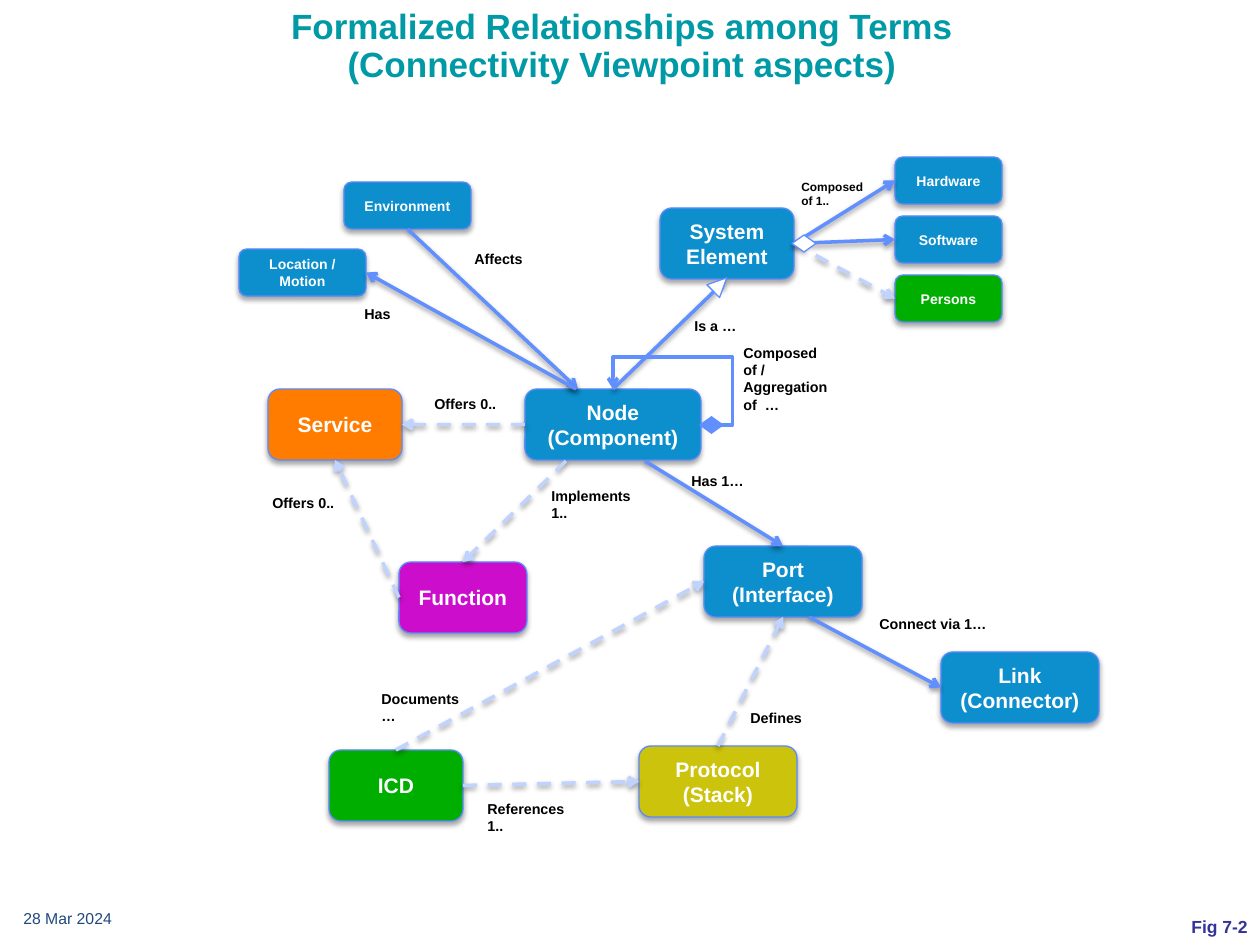
from lxml.etree import SubElement
from pptx import Presentation
from pptx.dml.color import RGBColor
from pptx.enum.dml import MSO_LINE
from pptx.enum.shapes import MSO_CONNECTOR, MSO_SHAPE
from pptx.enum.text import MSO_ANCHOR, MSO_AUTO_SIZE, PP_ALIGN
from pptx.oxml.ns import qn
from pptx.util import Emu, Pt

PIXELS_PER_INCH = 126
TOP, LEFT, BOTTOM, RIGHT = range(4)
BLUE, GREEN, ORANGE, PURPLE, OLIVE = "0C8FCC", "00AE00", "FF7C00", "CC0ECC", "CCC30C"
OUTLINE, SOLID_LINE, DASHED_LINE, WHITE = "5B8AFB", "618FFD", "C0D2FE", "FFFFFF"

# Name: left, top, width, height, fill, text size
BOXES = {
    "System\nElement": (660, 208, 134, 71, BLUE, 12),
    "Node\n(Component)": (525, 389, 176, 71, BLUE, 12),
    "Port\n(Interface)": (704, 546, 158, 71, BLUE, 12),
    "Link\n(Connector)": (941, 652, 158, 71, BLUE, 12),
    "Protocol\n(Stack)": (639, 746, 158, 71, OLIVE, 12),
    "Service": (268, 389, 134, 71, ORANGE, 12),
    "Function": (399, 562, 128, 71, PURPLE, 12),
    "ICD": (329, 750, 134, 71, GREEN, 12),
    "Environment": (344, 182, 127, 47, BLUE, 8),
    "Location / Motion": (239, 249, 127, 47, BLUE, 8),
}
ELEMENT_KINDS = [("Hardware", BLUE), ("Software", BLUE), ("Persons", GREEN)]

# Start, end, dashed; an end is a point or a box name with its side
RELATIONS = [
    ((566, 461), ("Function", TOP), True),
    (("Node\n(Component)", LEFT), ("Service", RIGHT), True),
    ((645, 461), ("Port\n(Interface)", TOP), False),
    (("Function", LEFT), ("Service", BOTTOM), True),
    (("System\nElement", RIGHT), ("Hardware", LEFT), False),
    (("System\nElement", RIGHT), ("Software", LEFT), False),
    (("System\nElement", RIGHT), ("Persons", LEFT), True),
    (("Environment", BOTTOM), (578, 389), False),
    ((576, 389), ("Location / Motion", RIGHT), False),
    ((809, 617), ("Link\n(Connector)", LEFT), False),
    (("Protocol\n(Stack)", TOP), ("Port\n(Interface)", BOTTOM), True),
    (("ICD", RIGHT), ("Protocol\n(Stack)", LEFT), True),
    (("ICD", TOP), ("Port\n(Interface)", LEFT), True),
]

# Text, left, top, width, height, text size
LABELS = [
    ("Implements 1..", 539, 481, 106, 48, 8.2),
    ("Is a …", 682, 311, 120, 30, 8.2),
    ("Offers 0..", 422, 389, 95, 30, 8.2),
    ("Has 1…", 679, 466, 115, 30, 8.2),
    ("Composed of 1..", 789, 173, 88, 42, 6.8),
    ("Affects", 462, 244, 77, 27, 8.2),
    ("Connect via 1…", 867, 609, 158, 30, 8.2),
    ("Composed of / Aggregation of  …", 731, 338, 120, 66, 8.2),
    ("Has", 352, 299, 77, 30, 8.2),
    ("Offers 0..", 260, 488, 106, 30, 8.2),
    ("References 1..", 475, 794, 117, 48, 8.2),
    ("Defines", 738, 703, 117, 30, 8.2),
    ("Documents …", 369, 684, 117, 48, 8.2),
]


def px(value):
    return Emu(round(value * 914400 / PIXELS_PER_INCH))


def color(hex_string):
    return RGBColor.from_string(hex_string)


def write_text(shape, text, size=8.2, fill="000000", bold=True,
               align=PP_ALIGN.LEFT, anchor=MSO_ANCHOR.TOP, wrap=True,
               auto_size=MSO_AUTO_SIZE.NONE, line_spacing=None):
    frame = shape.text_frame
    frame.text = text
    frame.word_wrap = wrap
    frame.auto_size = auto_size
    frame.vertical_anchor = anchor
    for paragraph in frame.paragraphs:
        paragraph.alignment = align
        paragraph.line_spacing = line_spacing
        for run in paragraph.runs:
            run.font.name = "Arial"
            run.font.size = Pt(size)
            run.font.bold = bold
            run.font.color.rgb = color(fill)


def set_shadow(properties, opacity, distance):
    effects = properties.find(qn("a:effectLst"))
    if effects is None:
        effects = SubElement(properties, qn("a:effectLst"))
    if opacity:
        shadow = SubElement(effects, qn("a:outerShdw"), blurRad=str(Pt(3.1)),
                            dist=str(Pt(distance)), dir="5400000", rotWithShape="0")
        black = SubElement(shadow, qn("a:srgbClr"), val="000000")
        SubElement(black, qn("a:alpha"), val=str(opacity * 1000))


def add_filled_shape(slide, kind, left, top, width, height, fill, outline=None):
    shape = slide.shapes.add_shape(kind, px(left), px(top), px(width), px(height))
    shape.shadow.inherit = False
    shape.fill.solid()
    shape.fill.fore_color.rgb = color(fill)
    if outline:
        shape.line.color.rgb = color(outline)
        shape.line.width = Pt(0.75)
    else:
        shape.line.fill.background()
    return shape


def add_box(slide, text, left, top, width, height, fill, size):
    box = add_filled_shape(slide, MSO_SHAPE.ROUNDED_RECTANGLE,
                           left, top, width, height, fill, OUTLINE)
    set_shadow(box._element.spPr, 35, 1.8)
    write_text(box, text, size=size, fill=WHITE,
               align=PP_ALIGN.CENTER, anchor=MSO_ANCHOR.MIDDLE)
    return box


def add_text(slide, text, left, top, width, height, **text_format):
    text_box = slide.shapes.add_textbox(px(left), px(top), px(width), px(height))
    write_text(text_box, text, **text_format)


def add_line(slide, boxes, start, end, dashed=False, arrow="arrow",
             kind=MSO_CONNECTOR.STRAIGHT, shadow=38):
    points = [(0, 0) if point[0] in boxes else point for point in (start, end)]
    line = slide.shapes.add_connector(kind, *[px(v) for point in points for v in point])
    if start[0] in boxes:
        line.begin_connect(boxes[start[0]], start[1])
    if end[0] in boxes:
        line.end_connect(boxes[end[0]], end[1])
    line.line.color.rgb = color(DASHED_LINE if dashed else SOLID_LINE)
    line.line.width = Pt(2)
    if dashed:
        line.line.dash_style = MSO_LINE.DASH
    properties = line._element.spPr
    SubElement(properties.find(qn("a:ln")), qn("a:tailEnd"), type=arrow)
    set_shadow(properties, shadow, 1.6)
    return line


def add_self_loop(slide, boxes):
    loop = add_line(slide, boxes, (701, 425), (613, 389),
                    kind=MSO_CONNECTOR.ELBOW, shadow=0)
    geometry = loop._element.spPr.find(qn("a:prstGeom"))
    geometry.set("prst", "bentConnector4")
    adjustments = geometry.find(qn("a:avLst"))
    if adjustments is None:
        adjustments = SubElement(geometry, qn("a:avLst"))
    for name, value in (("adj1", -35800), ("adj2", 188900)):
        SubElement(adjustments, qn("a:gd"), name=name, fmla=f"val {value}")


def main():
    presentation = Presentation()
    presentation.slide_width, presentation.slide_height = px(1260), px(945)
    slide = presentation.slides.add_slide(presentation.slide_layouts[5])

    # Title
    title = slide.shapes.title
    title.left, title.top, title.width, title.height = px(55), px(3), px(1134), px(106)
    write_text(title, "Formalized Relationships among Terms\v(Connectivity Viewpoint aspects)",
               size=20, fill="0099A6", align=PP_ALIGN.CENTER, line_spacing=0.9,
               anchor=MSO_ANCHOR.TOP)

    # Boxes
    boxes = {name: add_box(slide, name, *layout) for name, layout in BOXES.items()}
    for index, (name, fill) in enumerate(ELEMENT_KINDS):
        boxes[name] = add_box(slide, name, 895, 157 + 59 * index, 107, 47, fill, 8)

    # Relations
    for start, end, dashed in RELATIONS:
        add_line(slide, boxes, start, end, dashed)
    add_line(slide, boxes, ("Node\n(Component)", TOP), ("System\nElement", BOTTOM),
             arrow="triangle")
    add_self_loop(slide, boxes)

    # Aggregation and inheritance marks
    add_filled_shape(slide, MSO_SHAPE.FLOWCHART_DECISION, 699, 416, 25, 18, SOLID_LINE)
    add_filled_shape(slide, MSO_SHAPE.FLOWCHART_DECISION, 792, 235, 24, 17, WHITE, SOLID_LINE)
    inheritance = add_filled_shape(slide, MSO_SHAPE.ISOSCELES_TRIANGLE,
                                   711, 275, 18, 19, WHITE, SOLID_LINE)
    inheritance.rotation = 45.3

    # Relation labels
    for text, left, top, width, height, size in LABELS:
        add_text(slide, text, left, top, width, height, size=size,
                 auto_size=MSO_AUTO_SIZE.SHAPE_TO_FIT_TEXT)

    # Footer
    add_text(slide, "28 Mar 2024", 11, 901, 102, 35, size=9, fill="1F497D",
             bold=False, anchor=MSO_ANCHOR.MIDDLE, wrap=False)
    add_text(slide, "Fig 7-2", 1022, 908, 238, 37, size=10, fill="333399",
             align=PP_ALIGN.RIGHT, anchor=MSO_ANCHOR.MIDDLE, wrap=False)

    presentation.save("out.pptx")


if __name__ == "__main__":
    main()
